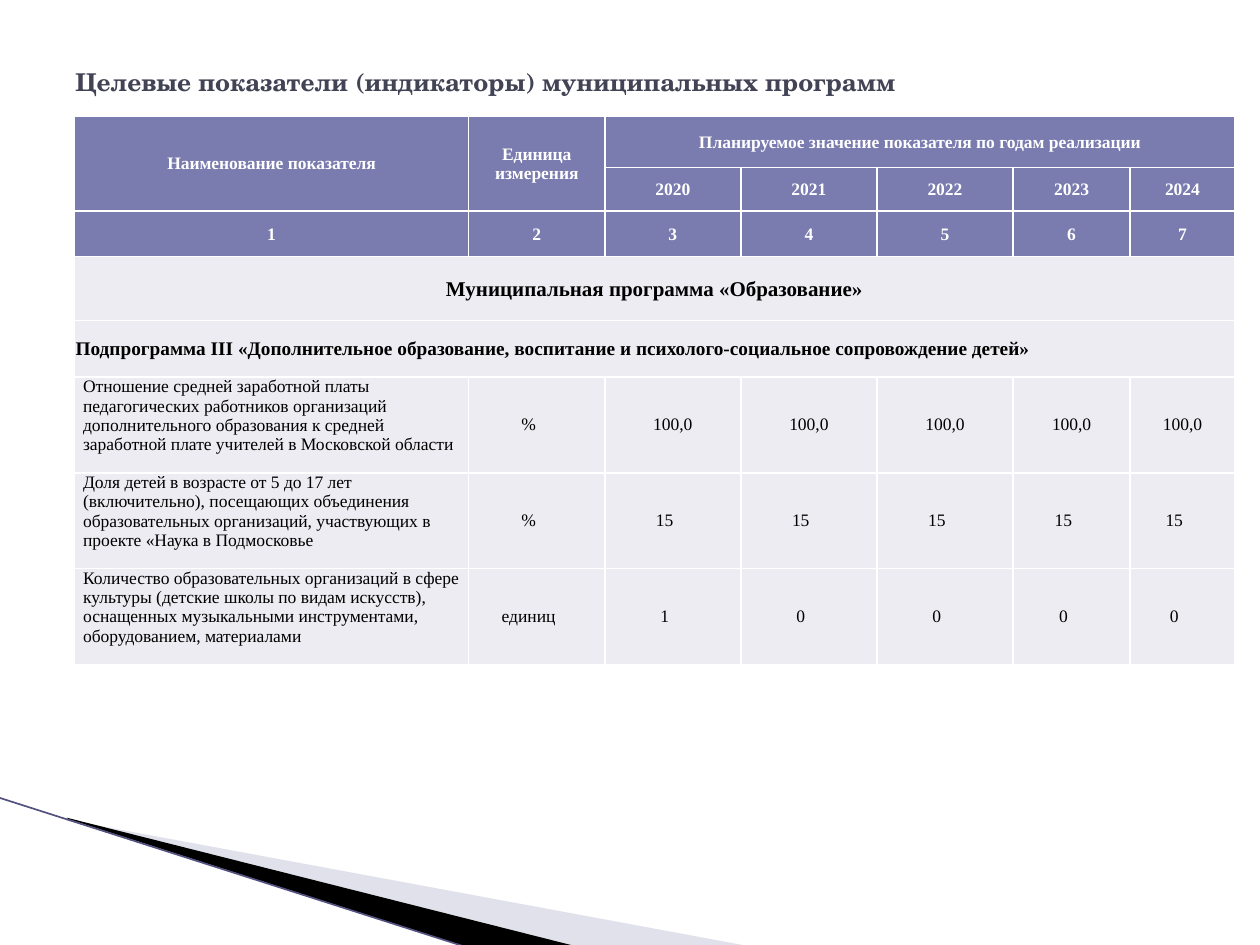
from lxml.etree import SubElement
from pptx import Presentation
from pptx.dml.color import RGBColor
from pptx.enum.shapes import MSO_CONNECTOR as Connector
from pptx.enum.text import MSO_ANCHOR as Anchor, PP_ALIGN as Align
from pptx.oxml.ns import qn
from pptx.util import Inches, Pt

COLORS = {
    "title": "424456", "header": "7A7BAE", "body": "ECECF2",
    "white": "FFFFFF", "black": "000000", "wedge": "B6B6D1", "edge": "53517F",
}
TITLE_FONT, TABLE_FONT = "TeX Gyre Schola", "Times New Roman"

COLUMN_WIDTHS = [3.13, 1.08, 1.08, 1.08, 1.08, 0.93, 0.83]
ROW_HEIGHTS = [0.41, 0.32, 0.36, 0.51, 0.45, 0.76, 0.76, 0.76]
YEARS = ["2020", "2021", "2022", "2023", "2024"]
INDICATORS = [
    ("Отношение средней заработной платы педагогических работников организаций "
     "дополнительного образования к средней заработной плате учителей в Московской области",
     "%", ["100,0"] * 5),
    ("Доля детей в возрасте от 5 до 17 лет (включительно), посещающих объединения "
     "образовательных организаций, участвующих в проекте «Наука в Подмосковье",
     "%", ["15"] * 5),
    ("Количество образовательных организаций в сфере культуры (детские школы по видам "
     "искусств), оснащенных музыкальными инструментами, оборудованием, материалами",
     "единиц", ["1", "0", "0", "0", "0"]),
]


def rgb(name):
    return RGBColor.from_string(COLORS[name])


def write_text(frame, text, *, size, color, font=TABLE_FONT, bold=False, align=Align.LEFT):
    para = frame.paragraphs[0]
    para.alignment = align
    span = para.add_run()
    span.text = text
    span.font.name, span.font.size, span.font.bold = font, Pt(size), bold
    span.font.color.rgb = rgb(color)


def add_wedge(page, points, color, opacity=None):
    corners = [(Inches(x), Inches(y)) for x, y in points]
    builder = page.shapes.build_freeform(*corners[0], scale=1.0)
    builder.add_line_segments(corners[1:], close=True)
    wedge = builder.convert_to_shape()
    wedge.shadow.inherit = False
    wedge.line.fill.background()
    wedge.fill.solid()
    wedge.fill.fore_color.rgb = rgb(color)
    if opacity is not None:
        tint = wedge.fill._xPr.find(".//" + qn("a:srgbClr"))
        SubElement(tint, qn("a:alpha"), val=str(opacity * 1000))


def add_edge(page, start, end):
    edge = page.shapes.add_connector(
        Connector.STRAIGHT, *(Inches(value) for value in start + end))
    edge.line.color.rgb = rgb("edge")
    edge.line.width = Pt(0.95)
    SubElement(edge._element.spPr, qn("a:effectLst"))


def add_title(page, text):
    box = page.shapes.add_textbox(Inches(0.5), Inches(0.3), Inches(9), Inches(0.69))
    box.text_frame.word_wrap = True
    box.text_frame.vertical_anchor = Anchor.MIDDLE
    write_text(box.text_frame, text, size=14, color="title", font=TITLE_FONT, bold=True)


def style_cell(cell, fill):
    # Borders must come before the fill in the cell properties
    properties = cell._tc.get_or_add_tcPr()
    for side in ("lnL", "lnR", "lnT", "lnB"):
        line = SubElement(properties, qn("a:" + side), w=str(Pt(1)))
        SubElement(SubElement(line, qn("a:solidFill")), qn("a:srgbClr"), val=COLORS["white"])
    cell.fill.solid()
    cell.fill.fore_color.rgb = rgb(fill)


def fill_cell(cell, text, *, insets=(0.01, 0.01, 0.01, 0), anchor=Anchor.MIDDLE,
              size=10, color="black", bold=False, align=Align.CENTER):
    cell.margin_left, cell.margin_top, cell.margin_right, cell.margin_bottom = map(Inches, insets)
    cell.vertical_anchor = anchor
    write_text(cell.text_frame, text, size=size, color=color, bold=bold, align=align)


def add_grid(page):
    frame = page.shapes.add_table(
        len(ROW_HEIGHTS), len(COLUMN_WIDTHS), Inches(0.59), Inches(0.92),
        Inches(sum(COLUMN_WIDTHS)), Inches(sum(ROW_HEIGHTS)))
    table = frame.table
    table.first_row = table.horz_banding = False
    for column, width in zip(table.columns, COLUMN_WIDTHS):
        column.width = Inches(width)
    for index, (row, height) in enumerate(zip(table.rows, ROW_HEIGHTS)):
        row.height = Inches(height)
        for cell in row.cells:
            style_cell(cell, "header" if index < 3 else "body")
    return table


def fill_header(table):
    for first, last in (((0, 0), (1, 0)), ((0, 1), (1, 1)), ((0, 2), (0, 6))):
        table.cell(*first).merge(table.cell(*last))
    labels = {
        (0, 0): "Наименование показателя",
        (0, 1): "Единица измерения",
        (0, 2): "Планируемое значение показателя по годам реализации",
    }
    labels.update({(1, column): year for column, year in enumerate(YEARS, 2)})
    labels.update({(2, column): str(column + 1) for column in range(len(COLUMN_WIDTHS))})
    for place, text in labels.items():
        fill_cell(table.cell(*place), text, color="white", bold=True)


def fill_sections(table):
    sections = [
        ("Муниципальная программа «Образование»", 12, Align.CENTER),
        ("Подпрограмма III «Дополнительное образование, воспитание и "
         "психолого-социальное сопровождение детей»", 11, Align.LEFT),
    ]
    for row, (text, size, align) in enumerate(sections, 3):
        table.cell(row, 0).merge(table.cell(row, 6))
        fill_cell(table.cell(row, 0), text, size=size, bold=True, align=align)


def fill_indicators(table):
    centred, shifted = (0.07, 0, 0.07, 0), (0.07, 0, 0.2, 0)
    for row, (name, unit, values) in enumerate(INDICATORS, 5):
        fill_cell(table.cell(row, 0), name, insets=centred, anchor=Anchor.TOP, align=Align.LEFT)
        fill_cell(table.cell(row, 1), unit, insets=shifted)
        for column, value in enumerate(values, 2):
            fill_cell(table.cell(row, column), value, insets=centred if row == 5 else shifted)


def main():
    deck = Presentation()
    deck.slide_width, deck.slide_height = Inches(10), Inches(7.5)
    page = deck.slides.add_slide(deck.slide_layouts[6])

    # Corner decoration
    add_wedge(page, [(0.55, 6.51), (5.95, 7.51), (4.56, 7.51), (0.55, 6.5)], "wedge", opacity=40)
    add_wedge(page, [(0.53, 6.49), (4.57, 7.51), (3.72, 7.52), (0.54, 6.5)], "black")
    add_edge(page, (-0.01, 6.33), (3.71, 7.52))

    # Title and indicator table
    add_title(page, "Целевые показатели (индикаторы) муниципальных программ")
    table = add_grid(page)
    fill_header(table)
    fill_sections(table)
    fill_indicators(table)

    deck.save("out.pptx")


if __name__ == "__main__":
    main()
